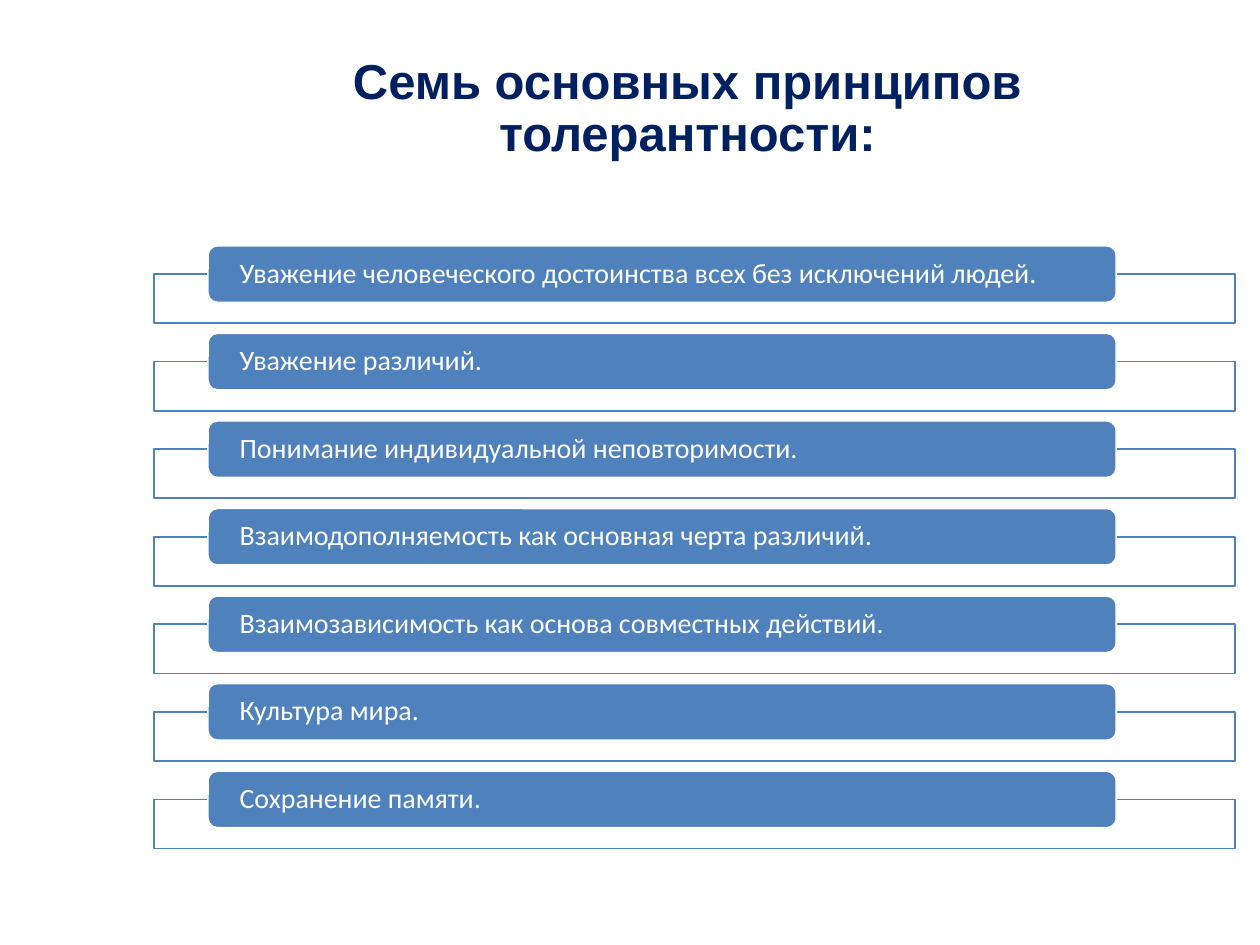
from typing import NamedTuple

from lxml import etree
from pptx import Presentation
from pptx.dml.color import RGBColor
from pptx.enum.shapes import MSO_SHAPE
from pptx.enum.text import MSO_ANCHOR, PP_ALIGN
from pptx.oxml.ns import qn
from pptx.util import Inches, Pt

RECT, ROUND = MSO_SHAPE.RECTANGLE, MSO_SHAPE.ROUNDED_RECTANGLE
LEFT, CENTER = PP_ALIGN.LEFT, PP_ALIGN.CENTER
MIDDLE = MSO_ANCHOR.MIDDLE

COLORS = {"navy": "002060", "blue": "4F81BD", "white": "FFFFFF"}
RULES = [
    "Уважение человеческого достоинства всех без исключений людей.",
    "Уважение различий.",
    "Понимание индивидуальной неповторимости.",
    "Взаимодополняемость как основная черта различий.",
    "Взаимозависимость как основа совместных действий.",
    "Культура мира.",
    "Сохранение памяти.",
]
FIRST, LAST = 1.95, 6.12
STEP = (LAST - FIRST) / (len(RULES) - 1)


class Box(NamedTuple):
    left: float
    top: float
    width: float
    height: float

    def lengths(self) -> list:
        return [Inches(value) for value in self]


def color(name: str) -> RGBColor:
    return RGBColor.from_string(COLORS[name])


def write(shape, text: str, *, font: str, size: float, tint: str,
          bold: bool = False, align=LEFT, inset=(0.1, 0.05)) -> None:
    frame = shape.text_frame
    frame.word_wrap = True
    frame.vertical_anchor = MIDDLE
    frame.margin_left = frame.margin_right = Inches(inset[0])
    frame.margin_top = frame.margin_bottom = Inches(inset[1])
    para = frame.paragraphs[0]
    para.alignment = align
    para.line_spacing = 0.9
    run = para.add_run()
    run.text = text
    run.font.name = font
    run.font.size = Pt(size)
    run.font.bold = bold
    run.font.color.rgb = color(tint)


def draw(slide, kind, box: Box, fill: str, line: str):
    shape = slide.shapes.add_shape(kind, *box.lengths())
    shape.shadow.inherit = False
    shape.fill.solid()
    shape.fill.fore_color.rgb = color(fill)
    shape.line.color.rgb = color(line)
    shape.line.width = Pt(1)
    return shape


def fade(shape, percent: int) -> None:
    """Set the opacity of a solid fill."""
    tone = shape.fill._xPr.find(qn("a:solidFill"))[0]
    etree.SubElement(tone, qn("a:alpha"), val=str(percent * 1000))


def add_rule(slide, text: str, top: float) -> None:
    """Draw an outlined strip with a labelled bar over its upper edge."""
    strip = draw(slide, RECT, Box(1.22, top + 0.225, 8.58, 0.39), "white", "blue")
    fade(strip, 90)
    bar = draw(slide, ROUND, Box(1.65, top, 7.21, 0.45), "blue", "white")
    write(bar, text, font="Calibri", size=16, tint="white", inset=(0.23, 0))


def main() -> None:
    deck = Presentation()
    deck.slide_width, deck.slide_height = Inches(10), Inches(7.5)
    slide = deck.slides.add_slide(deck.slide_layouts[6])
    title = slide.shapes.add_textbox(*Box(1.3, 0.36, 8.31, 1.02).lengths())
    write(title, "Семь основных принципов толерантности:", font="Arial",
          size=28, tint="navy", bold=True, align=CENTER)
    for i, text in enumerate(RULES):
        add_rule(slide, text, FIRST + i * STEP)
    deck.save("out.pptx")


if __name__ == "__main__":
    main()
